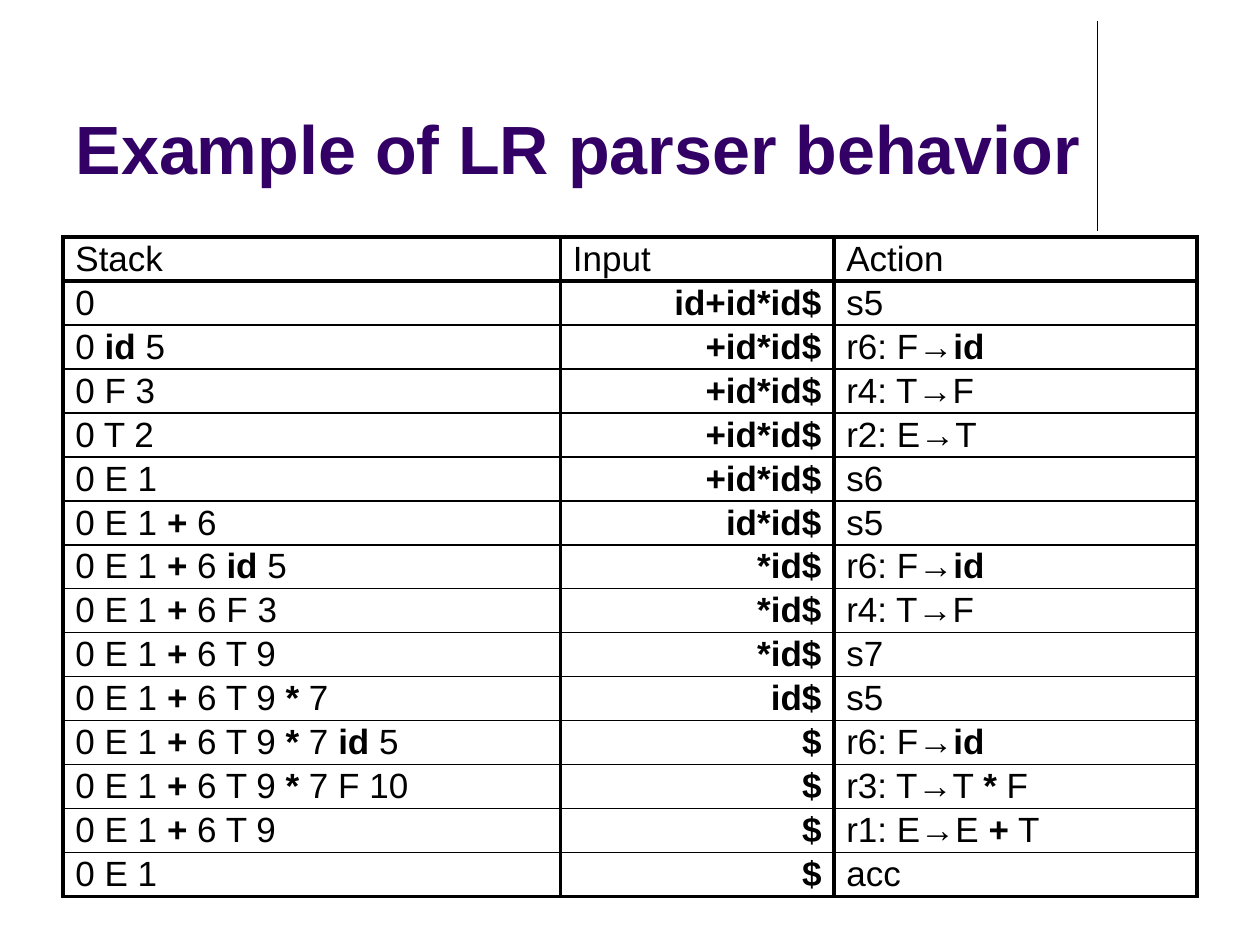
import pptx
import pptx.dml.color
import pptx.enum.shapes
import pptx.enum.text
import pptx.oxml.ns
import pptx.util
from dataclasses import dataclass
from lxml import etree
from pptx.util import Cm


@dataclass
class Theme:
    font: str = "Arial"
    title_color: str = "330066"
    ink: str = "000000"
    title_size: float = 39
    table_size: float = 20
    thick: float = 2.25
    thin: float = 1
    divider: float = 0.75


theme = Theme()
qn = pptx.oxml.ns.qn
align = pptx.enum.text.PP_ALIGN
anchor = pptx.enum.text.MSO_ANCHOR


def add_span(para, text, size, color, bold):
    span = para.add_run()
    span.text = text
    span.font.name = theme.font
    span.font.size = pptx.util.Pt(size)
    span.font.bold = bold
    span.font.color.rgb = pptx.dml.color.RGBColor.from_string(color)


def set_border(cell, side, width):
    """Draw one cell edge; side is L, R, T or B."""
    line = etree.SubElement(cell._tc.get_or_add_tcPr(), qn(f"a:ln{side}"),
                            w=str(pptx.util.Pt(width)))
    fill = etree.SubElement(line, qn("a:solidFill"))
    etree.SubElement(fill, qn("a:srgbClr"), val=theme.ink)


deck = pptx.Presentation()
deck.slide_width, deck.slide_height = Cm(25.4), Cm(19.05)
page = deck.slides.add_slide(deck.slide_layouts[5])

# Title
title = page.shapes.title
title.left, title.top, title.width, title.height = Cm(1.27), Cm(0.33), Cm(20.95), Cm(3.6)
title.text_frame.auto_size = pptx.enum.text.MSO_AUTO_SIZE.NONE
title.text_frame.word_wrap = True
title.text_frame.vertical_anchor = anchor.BOTTOM
para = title.text_frame.paragraphs[0]
para.alignment = align.LEFT
add_span(para, "Example of LR parser behavior", theme.title_size, theme.title_color, True)

# Vertical rule beside the title
divider = page.shapes.add_connector(pptx.enum.shapes.MSO_CONNECTOR.STRAIGHT,
                                    Cm(22.12), Cm(0.43), Cm(22.12), Cm(4.65))
divider.line.width = pptx.util.Pt(theme.divider)
divider.line.color.rgb = pptx.dml.color.RGBColor.from_string(theme.ink)
etree.SubElement(divider._element.spPr, qn("a:effectLst"))

# Parser trace: bars separate regular and bold text, starting with regular
trace = [
    ("Stack", "Input", "Action"),
    ("0", "|id+id*id$", "s5"),
    ("0 |id| 5", "|+id*id$", "r6: F→|id"),
    ("0 F 3", "|+id*id$", "r4: T→F"),
    ("0 T 2", "|+id*id$", "r2: E→T"),
    ("0 E 1", "|+id*id$", "s6"),
    ("0 E 1 |+| 6", "|id*id$", "s5"),
    ("0 E 1 |+| 6 |id| 5", "|*id$", "r6: F→|id"),
    ("0 E 1 |+| 6 F 3", "|*id$", "r4: T→F"),
    ("0 E 1 |+| 6 T 9", "|*id$", "s7"),
    ("0 E 1 |+| 6 T 9 |*| 7", "|id$", "s5"),
    ("0 E 1 |+| 6 T 9 |*| 7 |id| 5", "|$", "r6: F→|id"),
    ("0 E 1 |+| 6 T 9 |*| 7 F 10", "|$", "r3: T→T |*| F"),
    ("0 E 1 |+| 6 T 9", "|$", "r1: E→E |+| T"),
    ("0 E 1", "|$", "acc"),
]
column_widths = [Cm(10.03), Cm(5.51), Cm(7.32)]
table_height = Cm(13.3)
last = len(trace) - 1

table = page.shapes.add_table(len(trace), len(column_widths), Cm(1.27), Cm(4.78),
                              sum(column_widths), table_height).table
table.first_row = False
table.horz_banding = False
for column, width in zip(table.columns, column_widths):
    column.width = width

for row_index, entries in enumerate(trace):
    table.rows[row_index].height = table_height // len(trace)
    top = theme.thick if row_index <= 1 else theme.thin
    bottom = theme.thick if row_index in (0, last) else theme.thin
    for column_index, entry in enumerate(entries):
        cell = table.cell(row_index, column_index)
        cell.margin_left = cell.margin_right = Cm(0.25)
        cell.margin_top = cell.margin_bottom = Cm(0.03)
        cell.vertical_anchor = anchor.MIDDLE
        for side, width in zip("LRTB", (theme.thick, theme.thick, top, bottom)):
            set_border(cell, side, width)
        cell.fill.background()
        para = cell.text_frame.paragraphs[0]
        para.alignment = align.RIGHT if column_index == 1 and row_index else align.LEFT
        for part_index, part in enumerate(entry.split("|")):
            if part:
                add_span(para, part, theme.table_size, theme.ink, part_index % 2 == 1)

deck.save("out.pptx")
